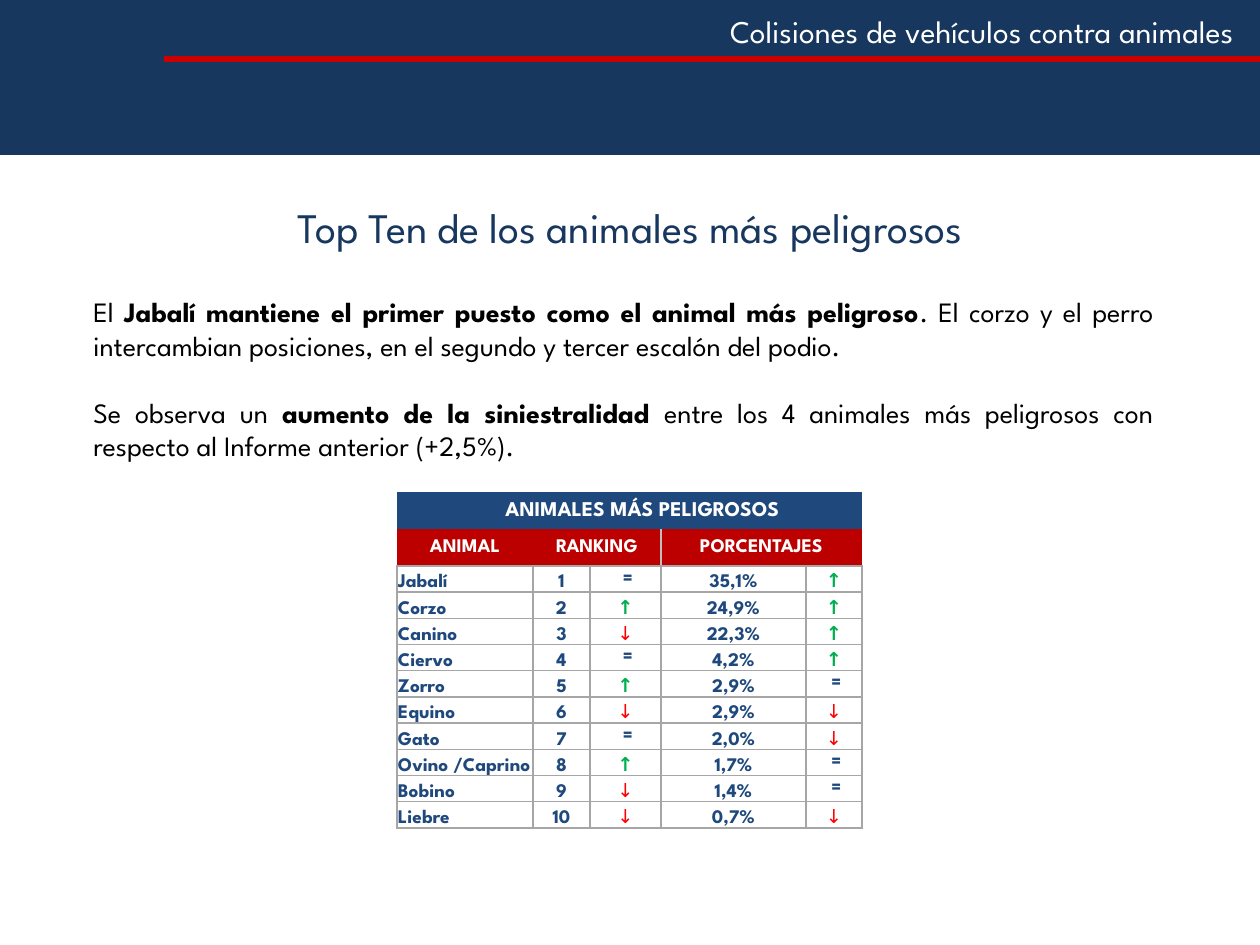
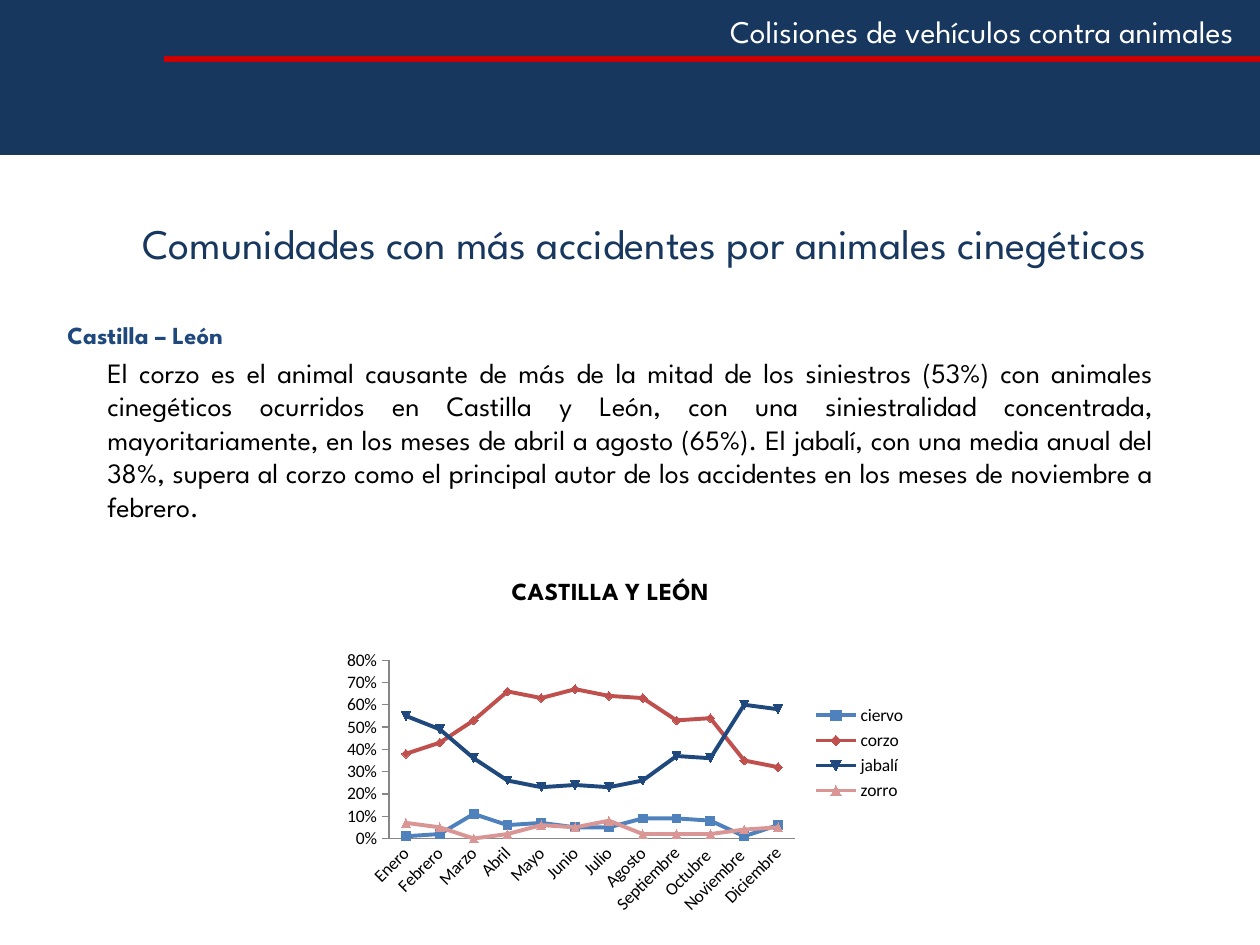
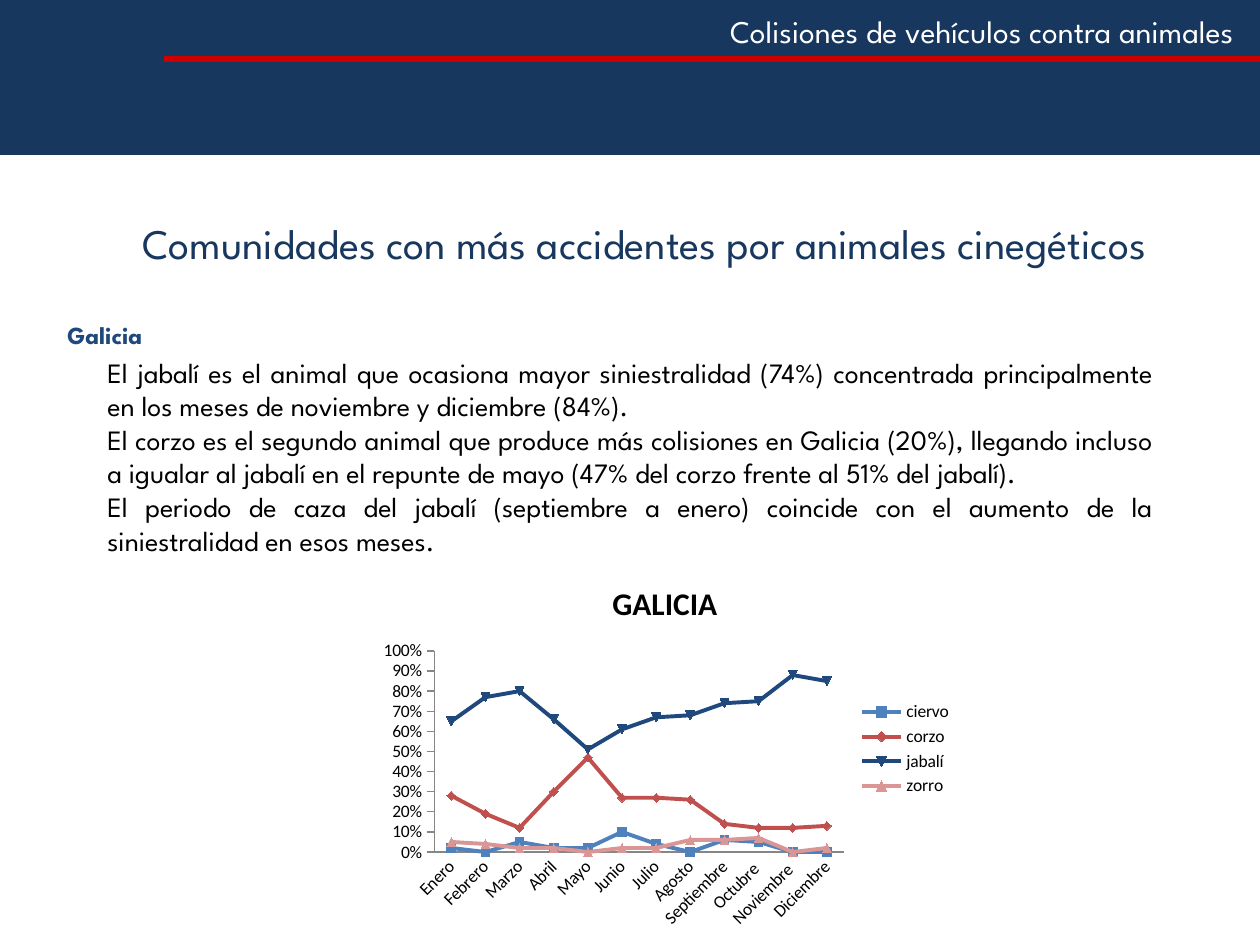
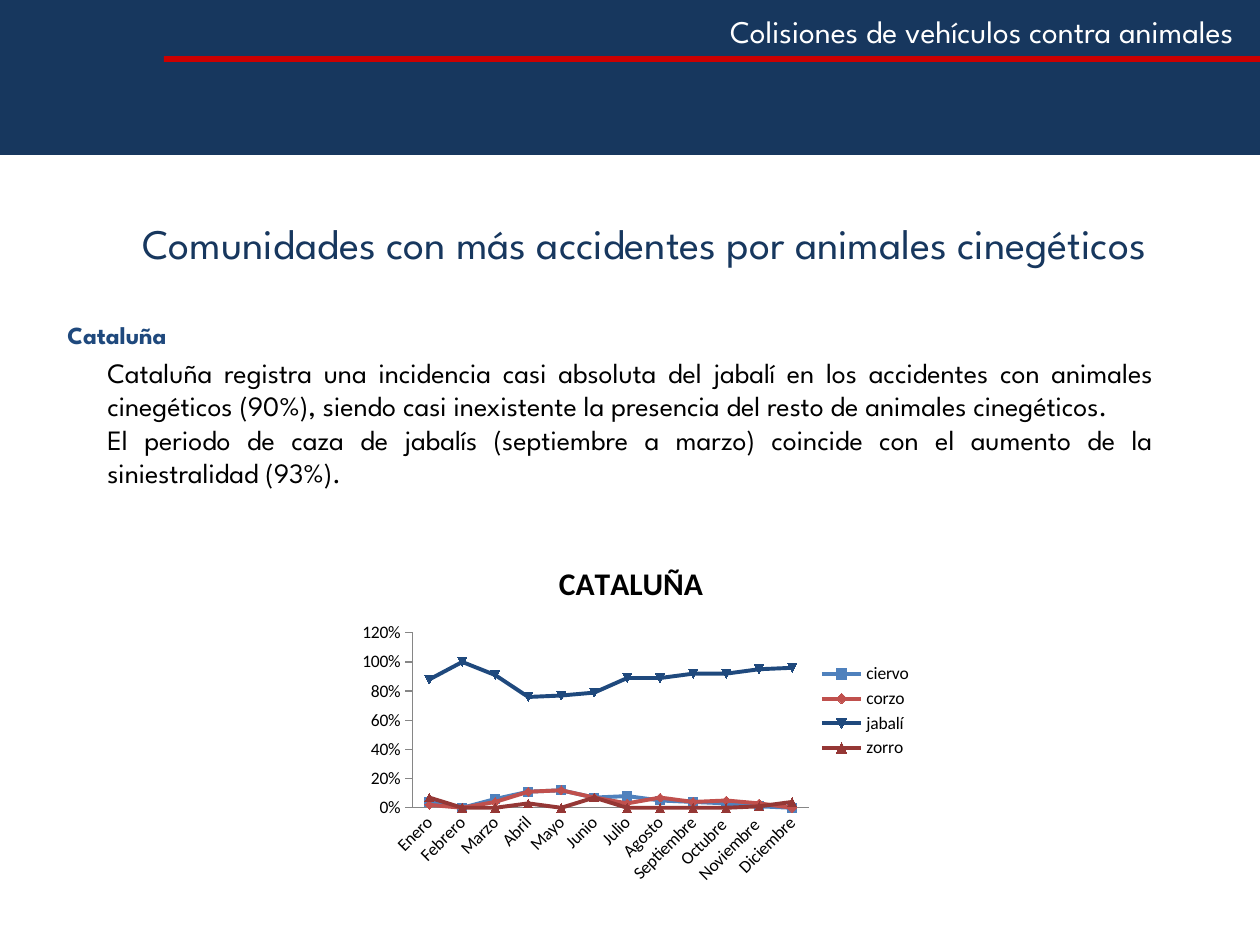
"""Builds four slides on vehicle collisions with animals."""
from lxml import etree
from pptx import Presentation
from pptx.chart.data import CategoryChartData
from pptx.dml.color import RGBColor
from pptx.enum.chart import XL_CHART_TYPE, XL_LEGEND_POSITION, XL_MARKER_STYLE, XL_TICK_MARK
from pptx.enum.shapes import MSO_SHAPE
from pptx.enum.text import MSO_ANCHOR, MSO_AUTO_SIZE, PP_ALIGN
from pptx.oxml.ns import qn
from pptx.util import Emu, Pt

LEFT, MID, RIGHT, JUST = PP_ALIGN.LEFT, PP_ALIGN.CENTER, PP_ALIGN.RIGHT, PP_ALIGN.JUSTIFY
TOP, CENTER, BASE = MSO_ANCHOR.TOP, MSO_ANCHOR.MIDDLE, MSO_ANCHOR.BOTTOM
RECT, FIT = MSO_SHAPE.RECTANGLE, MSO_AUTO_SIZE.SHAPE_TO_FIT_TEXT
LINES, AUTO = XL_CHART_TYPE.LINE_MARKERS, XL_MARKER_STYLE.AUTOMATIC
SIDE, BARE, OUT = XL_LEGEND_POSITION.RIGHT, XL_TICK_MARK.NONE, XL_TICK_MARK.OUTSIDE
SCALE = 914400 / 126
FONT, PLAIN = "League Spartan", "Calibri"
NAVY, BLUE, RED, CRIMSON = "17375E", "1F497D", "CC0000", "BC0000"
BLACK, WHITE, GRAY, SILVER, AXIS = "000000", "FFFFFF", "A6A6A6", "BFBFBF", "868686"
SKY, BRICK, PINK, MAROON = "4F81BD", "C0504D", "D99694", "953735"
MARKS = {"=": BLUE, "↑": "00B050", "↓": "FF0000"}
MONTHS = ["Enero", "Febrero", "Marzo", "Abril", "Mayo", "Junio", "Julio", "Agosto",
          "Septiembre", "Octubre ", "Noviembre ", "Diciembre"]
ANIMALS = ["ciervo", "corzo", "jabalí", "zorro"]
COLS = [136, 57, 71, 145, 56]
RANKS = [
    ("Jabalí", "=", "35,1%", "↑"),
    ("Corzo", "↑", "24,9%", "↑"),
    ("Canino", "↓", "22,3%", "↑"),
    ("Ciervo", "=", "4,2%", "↑"),
    ("Zorro", "↑", "2,9%", "="),
    ("Equino", "↓", "2,9%", "↓"),
    ("Gato", "=", "2,0%", "↓"),
    ("Ovino /Caprino", "↑", "1,7%", "="),
    ("Bobino", "↓", "1,4%", "="),
    ("Liebre", "↓", "0,7%", "↓"),
]
REGIONS = [
    {
        "label": ("Castilla – León", 204),
        "body": ["El corzo es el animal causante de más de la mitad de los siniestros (53%) con "
                 "animales cinegéticos ocurridos en Castilla y León, con una siniestralidad "
                 "concentrada, mayoritariamente, en los meses de abril a agosto (65%). El jabalí, "
                 "con una media anual del 38%, supera al corzo como el principal autor de los "
                 "accidentes en los meses de noviembre a febrero."],
        "high": 183,
        "title": ("CASTILLA Y LEÓN", 14, FONT),
        "box": (303, 562, 615, 364),
        "plot": (0.14, 0.27, 0.66, 0.49),
        "key": (0.82, 0.38, 0.17, 0.29),
        "axis": (0.8, 0.1),
        "last": PINK,
        "rows": [
            [0.01, 0.02, 0.11, 0.06, 0.07, 0.05, 0.05, 0.09, 0.09, 0.08, 0.01, 0.06],
            [0.38, 0.43, 0.53, 0.66, 0.63, 0.67, 0.64, 0.63, 0.53, 0.54, 0.35, 0.32],
            [0.55, 0.49, 0.36, 0.26, 0.23, 0.24, 0.23, 0.26, 0.37, 0.36, 0.6, 0.58],
            [0.07, 0.05, 0, 0.02, 0.06, 0.05, 0.08, 0.02, 0.02, 0.02, 0.04, 0.05],
        ],
    },
    {
        "label": ("Galicia", 112),
        "body": ["El jabalí es el animal que ocasiona mayor siniestralidad (74%) concentrada "
                 "principalmente en los meses de noviembre y diciembre (84%).",
                 "El corzo es el segundo animal que produce más colisiones en Galicia (20%), "
                 "llegando incluso a igualar al jabalí en el repunte de mayo (47% del corzo "
                 "frente al 51% del jabalí).",
                 "El periodo de caza del jabalí (septiembre a enero) coincide con el aumento de "
                 "la siniestralidad en esos meses."],
        "high": 251,
        "title": ("GALICIA ", 18, PLAIN),
        "box": (372, 562, 593, 374),
        "plot": (0.105, 0.238, 0.691, 0.538),
        "axis": (1, 0.1),
        "last": PINK,
        "rows": [
            [0.02, 0, 0.05, 0.02, 0.02, 0.1, 0.04, 0, 0.06, 0.05, 0, 0],
            [0.28, 0.19, 0.12, 0.3, 0.47, 0.27, 0.27, 0.26, 0.14, 0.12, 0.12, 0.13],
            [0.65, 0.77, 0.8, 0.66, 0.51, 0.61, 0.67, 0.68, 0.74, 0.75, 0.88, 0.85],
            [0.05, 0.04, 0.02, 0.02, 0, 0.02, 0.02, 0.06, 0.06, 0.07, 0, 0.02],
        ],
    },
    {
        "label": ("Cataluña", 137),
        "body": ["Cataluña registra una incidencia casi absoluta del jabalí en los accidentes con "
                 "animales cinegéticos (90%), siendo casi inexistente la presencia del resto de "
                 "animales cinegéticos.",
                 "El periodo de caza de jabalís (septiembre a marzo) coincide con el aumento de "
                 "la siniestralidad (93%)."],
        "high": 183,
        "title": ("CATALUÑA ", 18, PLAIN),
        "spot": (0.37, 0.08),
        "box": (335, 526, 590, 370),
        "plot": (0.132, 0.289, 0.671, 0.473),
        "axis": (1.2, 0.2),
        "last": MAROON,
        "rows": [
            [0.04, 0, 0.06, 0.11, 0.12, 0.07, 0.08, 0.05, 0.04, 0.03, 0.01, 0],
            [0.02, 0, 0.04, 0.11, 0.12, 0.07, 0.03, 0.07, 0.04, 0.05, 0.03, 0],
            [0.88, 1, 0.91, 0.76, 0.77, 0.79, 0.89, 0.89, 0.92, 0.92, 0.95, 0.96],
            [0.07, 0, 0, 0.03, 0, 0.07, 0, 0, 0, 0, 0.01, 0.04],
        ],
    },
]


def px(num):
    """Turn pixels into EMU."""
    return Emu(round(num * SCALE))


def place(box):
    """Turn a pixel box into EMU."""
    return [px(num) for num in box]


def rgb(code):
    """Turn a hex string into a colour."""
    return RGBColor.from_string(code)


def style(font, size, color, bold=False, name=FONT):
    """Set the look of a font."""
    font.size, font.bold, font.name = Pt(size), bold, name
    font.color.rgb = rgb(color)


def rect(slide, box, color):
    """Add a plain filled rectangle."""
    shape = slide.shapes.add_shape(RECT, *place(box))
    shape.shadow.inherit = False
    shape.fill.solid()
    shape.fill.fore_color.rgb = rgb(color)
    shape.line.fill.background()


def text(slide, box, paras, size, color, align=LEFT, anchor=TOP, bold=False, wrap=True, gap=0):
    """Add a text box whose paragraphs are lists of (words, bold) runs or strings."""
    frame = slide.shapes.add_textbox(*place(box)).text_frame
    frame.word_wrap, frame.vertical_anchor = wrap, anchor
    if not wrap:
        frame.auto_size = FIT
    for num, runs in enumerate(paras):
        para = frame.add_paragraph() if num else frame.paragraphs[0]
        para.alignment = align
        if num and gap:
            para.space_before = Pt(gap)
        for words, heavy in [(runs, bold)] if isinstance(runs, str) else runs:
            run = para.add_run()
            run.text = words
            style(run.font, size, color, heavy)


def start(deck, title, box):
    """Add a slide with the shared band, header, red rule and its title."""
    slide = deck.slides.add_slide(deck.slide_layouts[6])
    rect(slide, (0, 0, 1260, 155), NAVY)
    text(slide, (611, 6, 635, 50), ["Colisiones de vehículos contra animales"], 18, WHITE,
         RIGHT, wrap=False)
    rect(slide, (164, 56, 1096, 6), RED)
    text(slide, box, [title], 24, NAVY, MID, CENTER)
    return slide


def edge(cell, sides):
    """Draw the given cell sides in their colours and clear the others."""
    props = cell._tc.get_or_add_tcPr()
    for side in "LRTB":
        line = etree.SubElement(props, qn("a:ln" + side), w="12700")
        if side in sides:
            fill = etree.SubElement(line, qn("a:solidFill"))
            etree.SubElement(fill, qn("a:srgbClr"), val=sides[side])
        else:
            etree.SubElement(line, qn("a:noFill"))


def paint(cell, fill, sides):
    """Set borders, fill and margins of a cell."""
    edge(cell, sides)
    cell.fill.solid()
    cell.fill.fore_color.rgb = rgb(fill)
    cell.margin_left = cell.margin_right = cell.margin_top = px(1)
    cell.margin_bottom = 0


def write(cell, words, size, color, align=MID, anchor=CENTER, bold=True):
    """Write one run into a cell."""
    cell.vertical_anchor = anchor
    para = cell.text_frame.paragraphs[0]
    para.alignment = align
    run = para.add_run()
    run.text = words
    style(run.font, size, color, bold)


def ranking(slide):
    """Add the table of the most dangerous animals."""
    grid = slide.shapes.add_table(len(RANKS) + 2, len(COLS), *place((397, 492, 465, 336))).table
    grid.first_row = grid.horz_banding = False
    for col, wide in zip(grid.columns, COLS):
        col.width = px(wide)
    for num, row in enumerate(grid.rows):
        row.height = px(37 if num < 2 else 26.2)
    under = {"B": GRAY}
    heads = [under, under, {**under, "R": SILVER}, {**under, "L": SILVER}, under]
    for col, sides in enumerate(heads):
        paint(grid.cell(0, col), BLUE, {})
        paint(grid.cell(1, col), CRIMSON, sides)
    grid.cell(0, 0).merge(grid.cell(0, 3))
    grid.cell(0, 0).margin_left = px(83)
    write(grid.cell(0, 0), "ANIMALES MÁS PELIGROSOS", 12, WHITE)
    for row, col in [(0, 1), (0, 2), (0, 3), (0, 4), (1, 2), (1, 4)]:
        para = grid.cell(row, col).text_frame.paragraphs[0]
        etree.SubElement(para._p, qn("a:endParaRPr"), sz="1100")
    for col, words in [(0, "ANIMAL"), (1, "RANKING"), (3, "PORCENTAJES")]:
        if col:
            grid.cell(1, col).merge(grid.cell(1, col + 1))
        write(grid.cell(1, col), words, 11, WHITE)
    frame = dict.fromkeys("LRTB", GRAY)
    for num, (name, trend, share, change) in enumerate(RANKS, 1):
        for col, words in enumerate([name, str(num), trend, share, change]):
            cell = grid.cell(num + 1, col)
            paint(cell, WHITE, frame)
            same = words == "="
            write(cell, " =" if same else words, 11, MARKS.get(words, BLUE),
                  MID if col else LEFT, CENTER if same else BASE, words != "↓")


def pin(node, index, box, inner=False):
    """Fix a chart part at shares of the chart's width and height."""
    for old in node.findall(qn("c:layout")):
        node.remove(old)
    layout = etree.Element(qn("c:layout"))
    manual = etree.SubElement(layout, qn("c:manualLayout"))
    pairs = [("layoutTarget", "inner")] if inner else []
    pairs += [("xMode", "edge"), ("yMode", "edge"), *zip("xywh", box)]
    for tag, val in pairs:
        etree.SubElement(manual, qn("c:" + tag), val=str(val))
    node.insert(index, layout)


def graph(slide, region):
    """Add the monthly line chart of a region."""
    data = CategoryChartData(number_format="0%")
    data.categories = MONTHS
    for name, vals in zip(ANIMALS, region["rows"]):
        data.add_series(name, vals)
    chart = slide.shapes.add_chart(LINES, *place(region["box"]), data).chart
    style(chart.font, 10, BLACK, name=PLAIN)
    words, size, face = region["title"]
    chart.has_title = True
    run = chart.chart_title.text_frame.paragraphs[0].add_run()
    run.text = words
    style(run.font, size, BLACK, True, face)
    chart.has_legend = True
    chart.legend.position = SIDE
    chart.legend.include_in_layout = False
    cat, val = chart.category_axis, chart.value_axis
    val.minimum_scale = 0
    val.maximum_scale, val.major_unit = region["axis"]
    val.has_major_gridlines = False
    val.tick_labels.number_format = "0%"
    val.tick_labels.number_format_is_linked = False
    for axis, tick in [(cat, BARE), (val, OUT)]:
        axis.major_tick_mark = tick
        axis.format.line.color.rgb = rgb(AXIS)
        style(axis.tick_labels.font, 10, BLACK, name=PLAIN)
    chart.plots[0].vary_by_categories = False
    for line, color in zip(chart.plots[0].series, [SKY, BRICK, BLUE, region["last"]]):
        line.smooth = False
        line.format.line.width = Pt(2.25)
        line.format.line.color.rgb = rgb(color)
        mark = line.marker
        mark.style, mark.size = AUTO, 5
        mark.format.fill.solid()
        mark.format.fill.fore_color.rgb = rgb(color)
        mark.format.line.color.rgb = rgb(color)
    space = chart._chartSpace
    pin(space.chart.plotArea, 0, region["plot"], True)
    if "key" in region:
        pin(chart.legend._element, 1, region["key"])
    if "spot" in region:
        pin(chart.chart_title._element, 1, region["spot"])
    for body in space.xpath(".//c:catAx/c:txPr/a:bodyPr"):
        body.set("rot", "-2700000")


def main():
    """Build and save the deck."""
    deck = Presentation()
    deck.slide_width, deck.slide_height = px(1260), px(945)
    slide = start(deck, "Top Ten de los animales más peligrosos", (95, 125, 1071, 203))
    text(slide, (81, 46, 1085, 665), [
        [("El ", False),
         ("Jabalí mantiene el primer puesto como el animal más peligroso", True),
         (". El corzo y el perro intercambian posiciones, en el segundo y tercer escalón "
          "del podio. ", False)],
        [("Se observa un ", False), ("aumento de la siniestralidad ", True),
         ("entre los 4 animales más peligrosos con respecto al Informe anterior (+2,5%).",
          False)],
    ], 16, BLACK, JUST, CENTER, gap=19.2)
    ranking(slide)
    for region in REGIONS:
        slide = start(deck, "Comunidades con más accidentes por animales cinegéticos",
                      (34, 141, 1221, 203))
        name, wide = region["label"]
        text(slide, (55, 314, wide, 43), [name], 14, BLUE, bold=True, wrap=False)
        text(slide, (95, 349, 1071, region["high"]), region["body"], 16, BLACK, JUST)
        graph(slide, region)
    deck.save("out.pptx")


if __name__ == "__main__":
    main()
